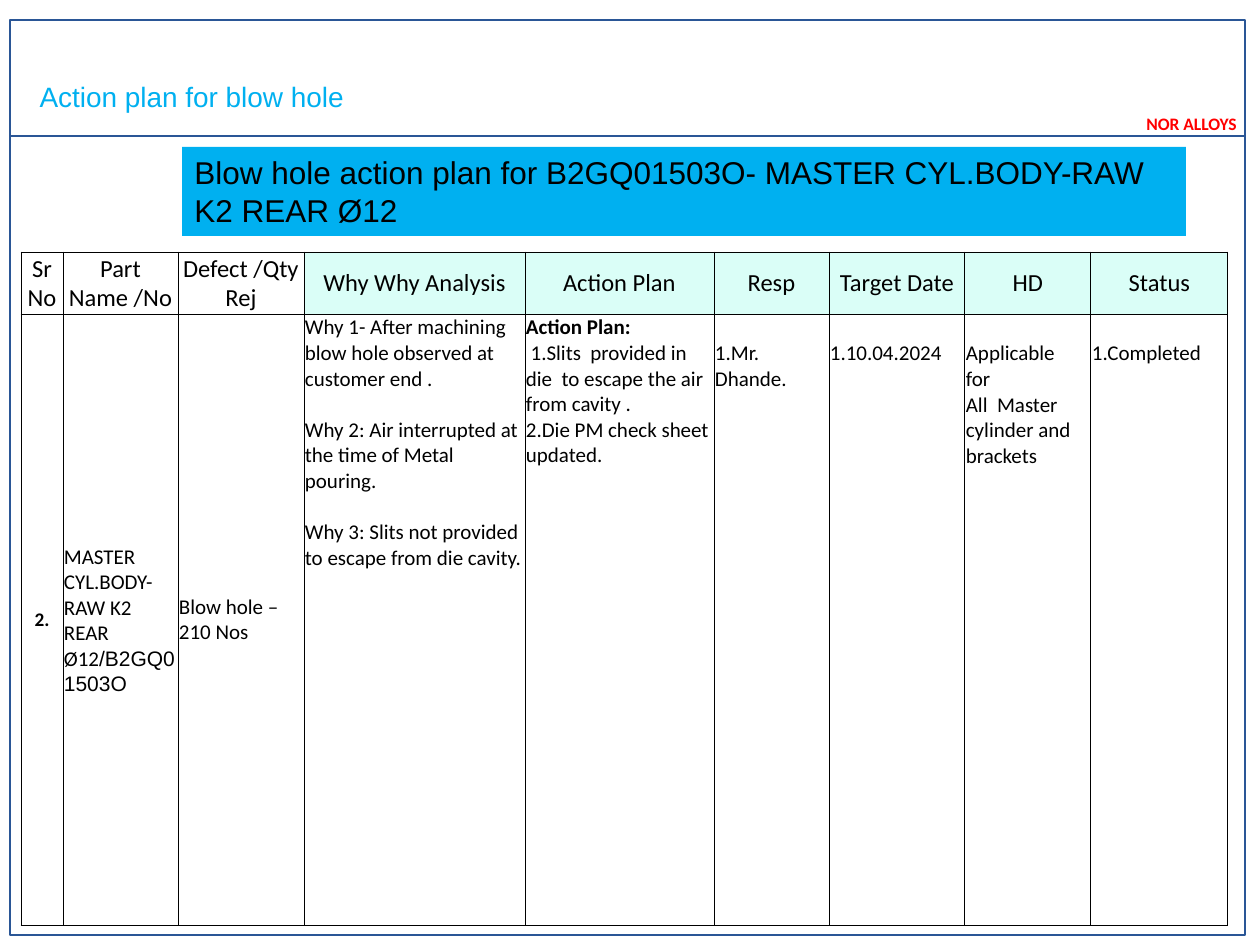
"""Build the blow hole action plan slide."""
import pptx
import pptx.dml.color
import pptx.enum.shapes
import pptx.enum.text
import pptx.oxml
import pptx.oxml.ns
import pptx.util

SCALE = 914400 / 126
COLORS = {"frame": "2A5696", "accent": "00B0F0", "header": "DAFEF7",
          "label": "FF0000", "text": "000000"}
ANCHOR = pptx.enum.text.MSO_ANCHOR
ALIGN = pptx.enum.text.PP_ALIGN
SHAPE = pptx.enum.shapes.MSO_SHAPE


def px(*lengths):
    return [pptx.util.Emu(round(length * SCALE)) for length in lengths]


def style(para, size, color="text", name="Calibri", bold=False, align=ALIGN.LEFT):
    para.alignment = align
    para.font.size = pptx.util.Pt(size)
    para.font.name = name
    para.font.bold = bold
    para.font.color.rgb = pptx.dml.color.RGBColor.from_string(COLORS[color])


deck = pptx.Presentation()
deck.slide_width, deck.slide_height = px(1260, 945)
slide = deck.slides.add_slide(deck.slide_layouts[5])
shapes = slide.shapes
frame_color = pptx.dml.color.RGBColor.from_string(COLORS["frame"])

title = shapes.title
title.left, title.top, title.width, title.height = px(27, 73, 1044, 47)
title.text_frame.text = "Action plan for blow hole"
title.text_frame.vertical_anchor = ANCHOR.TOP
style(title.text_frame.paragraphs[0], 16, "accent", "Arial")

rule = shapes.add_connector(pptx.enum.shapes.MSO_CONNECTOR.STRAIGHT,
                            *px(10, 136, 1245, 136))
rule.line.color.rgb = frame_color
rule.line.width = pptx.util.Pt(1.5)
rule._element.spPr.append(pptx.oxml.parse_xml(
    f'<a:effectLst {pptx.oxml.ns.nsdecls("a")}/>'))

frame = shapes.add_shape(SHAPE.RECTANGLE, *px(10, 20, 1235, 915))
frame.shadow.inherit = False
frame.fill.background()
frame.line.color.rgb = frame_color
frame.line.width = pptx.util.Pt(1.5)

company = shapes.add_textbox(*px(1134, 107, 126, 32))
company.text_frame.word_wrap = False
company.text_frame.text = "NOR ALLOYS"
style(company.text_frame.paragraphs[0], 10, "label", bold=True)

widths = [42, 115, 126, 221, 189, 115, 136, 126, 137]
heights = [62, 611]
headers = ["Sr No", "Part Name /No", "Defect /Qty Rej", "Why Why Analysis",
           "Action Plan", "Resp", "Target Date", "HD", "Status"]
details = [
    ["2."],
    ["MASTER CYL.BODY-RAW K2 REAR Ø12"],
    ["Blow hole – 210 Nos"],
    ["Why 1- After machining blow hole observed at customer end .",
     "Why 2: Air interrupted at the time of Metal pouring.",
     "Why 3: Slits not provided to escape from die cavity."],
    ["Action Plan:",
     " 1.Slits  provided in die  to escape the air from cavity .",
     "2.Die PM check sheet updated."],
    ["1.Mr. Dhande."],
    ["1.10.04.2024"],
    ["Applicable", "for", "All  Master cylinder and brackets"],
    ["1.Completed"],
]

table = shapes.add_table(2, len(widths), *px(21, 252, sum(widths), sum(heights))).table
table.first_row = table.horz_banding = False
for column, width in zip(table.columns, widths):
    column.width = px(width)[0]
for row, height in zip(table.rows, heights):
    row.height = px(height)[0]

for row_index, texts in enumerate([[[header] for header in headers], details]):
    is_header = row_index == 0
    for column_index, lines in enumerate(texts):
        cell = table.cell(row_index, column_index)
        top = 27 if not is_header and column_index >= 5 else 1
        cell.margin_left, cell.margin_right, cell.margin_top, cell.margin_bottom = px(1, 1, top, 0)
        centred = is_header or column_index < 3
        cell.vertical_anchor = ANCHOR.MIDDLE if centred else ANCHOR.TOP
        for side in ("lnL", "lnR", "lnT", "lnB"):
            cell._tc.get_or_add_tcPr().append(pptx.oxml.parse_xml(
                f'<a:{side} {pptx.oxml.ns.nsdecls("a")} w="6350"><a:solidFill>'
                f'<a:srgbClr val="{COLORS["text"]}"/></a:solidFill></a:{side}>'))
        if is_header and column_index >= 3:
            cell.fill.solid()
            cell.fill.fore_color.rgb = pptx.dml.color.RGBColor.from_string(COLORS["header"])
        else:
            cell.fill.background()
        cell.text_frame.text = "\n".join(lines)
        is_number = not is_header and column_index == 0
        for line_index, para in enumerate(cell.text_frame.paragraphs):
            size = 14 if is_header else 11 if is_number else 12
            bold = is_number or lines[line_index] == "Action Plan:"
            style(para, size, bold=bold,
                  align=ALIGN.CENTER if is_header or is_number else ALIGN.LEFT)
            if headers[column_index] == "Why Why Analysis" and line_index:
                para.space_before = pptx.util.Pt(14.65)

part_number = table.cell(1, 1).text_frame.paragraphs[0].add_run()
part_number.text = "/B2GQ01503O"
part_number.font.name = "Arial"

banner = shapes.add_shape(SHAPE.RECTANGLE, *px(182, 147, 1004, 89))
banner.shadow.inherit = False
banner.fill.solid()
banner.fill.fore_color.rgb = pptx.dml.color.RGBColor.from_string(COLORS["accent"])
banner.line.fill.background()
banner.text_frame.word_wrap = True
banner.text_frame.vertical_anchor = ANCHOR.TOP
banner.text_frame.text = "Blow hole action plan for B2GQ01503O- MASTER CYL.BODY-RAW K2 REAR Ø12"
style(banner.text_frame.paragraphs[0], 18, name="Arial")

deck.save("out.pptx")
